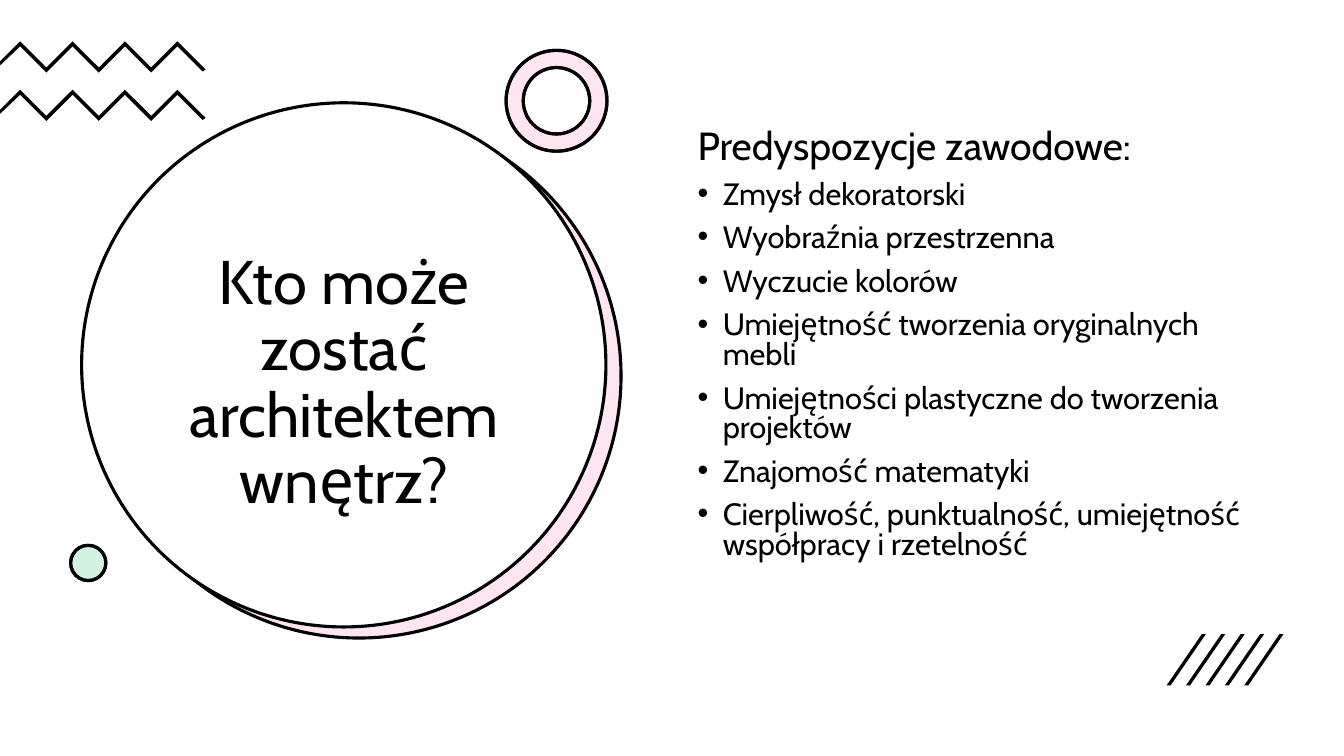
"""Build the slide on who can become an interior architect."""
from lxml import etree
from pptx import Presentation
from pptx.dml.color import RGBColor
from pptx.enum.shapes import MSO_SHAPE
from pptx.enum.text import MSO_ANCHOR, PP_ALIGN
from pptx.oxml.ns import qn
from pptx.util import Inches, Pt

OVAL, DONUT = MSO_SHAPE.OVAL, MSO_SHAPE.DONUT
MIDDLE, TOP = MSO_ANCHOR.MIDDLE, MSO_ANCHOR.TOP
CENTER = PP_ALIGN.CENTER
FONT = "Cabin"
COLORS = {"ink": "000000", "paper": "FFFFFF", "pink": "FF80BD", "green": "21C46B"}
TINT_ALPHA = "20000"

deck = Presentation()
deck.slide_width, deck.slide_height = Inches(13.33), Inches(7.5)
page = deck.slides.add_slide(deck.slide_layouts[6])
page.background.fill.solid()
page.background.fill.fore_color.rgb = RGBColor.from_string(COLORS["paper"])


def add_ink_outline(points):
    """Draw a closed black shape through points given in inches."""
    corners = [(Inches(x), Inches(y)) for x, y in points]
    builder = page.shapes.build_freeform(*corners[0])
    builder.add_line_segments(corners[1:], close=True)
    shape = builder.convert_to_shape()
    shape.shadow.inherit = False
    shape.fill.solid()
    shape.fill.fore_color.rgb = RGBColor.from_string(COLORS["ink"])
    shape.line.fill.background()


def add_text_frame(left, top, width, height, anchor):
    """Add a wrapping text box and return its frame."""
    box = page.shapes.add_textbox(Inches(left), Inches(top), Inches(width), Inches(height))
    box.text_frame.word_wrap = True
    box.text_frame.vertical_anchor = anchor
    return box.text_frame


rounds = [
    (OVAL, 0.97, 1.14, 5.2, "paper", False),
    (OVAL, 0.96, 1.13, 5.2, "pink", True),
    (OVAL, 0.81, 1.02, 5.2, "paper", True),
    (DONUT, 5.02, 0.5, 1, "paper", True),
    (DONUT, 5.02, 0.5, 1, "pink", True),
    (OVAL, 0.7, 5.41, 0.35, "paper", True),
    (OVAL, 0.7, 5.41, 0.35, "green", True),
]
for kind, left, top, size, color, outlined in rounds:
    shape = page.shapes.add_shape(kind, Inches(left), Inches(top), Inches(size), Inches(size))
    shape.shadow.inherit = False
    shape.fill.solid()
    shape.fill.fore_color.rgb = RGBColor.from_string(COLORS[color])
    if color != "paper":
        tint = shape.fill._xPr.find(".//" + qn("a:srgbClr"))
        etree.SubElement(tint, qn("a:alpha")).set("val", TINT_ALPHA)
    if kind == DONUT:
        shape.adjustments[0] = 0.17
    if outlined:
        shape.line.color.rgb = RGBColor.from_string(COLORS["ink"])
        shape.line.width = Pt(2.25)
    else:
        shape.line.fill.background()

for top in (0.41, 0.89):
    teeth = [(0.2 + 0.26 * i, top + 0.26 * (i % 2)) for i in range(7)]
    lower_teeth = [(x, y + 0.05) for x, y in reversed(teeth)]
    tip = [(2.04, top + 0.28), (2.01, top + 0.3)]
    start = [(0, top + 0.24), (0, top + 0.2)]
    add_ink_outline(teeth + tip + lower_teeth + start)

for i in range(5):
    left = 11.57 + 0.1925 * i
    add_ink_outline([(left + 0.04, 6.8), (left, 6.8), (left + 0.35, 6.29), (left + 0.39, 6.29)])

title = add_text_frame(1.21, 2.05, 4.41, 3.52, MIDDLE).paragraphs[0]
title.text = "Kto może zostać architektem wnętrz?"
title.alignment = CENTER
title.line_spacing = 0.9
title.font.size = Pt(44)

body = add_text_frame(6.82, 1.24, 5.71, 4.76, TOP)
heading = body.paragraphs[0]
heading.text = "Predyspozycje zawodowe:"
heading.font.size = Pt(28)

skills = [
    "Zmysł dekoratorski",
    "Wyobraźnia przestrzenna",
    "Wyczucie kolorów",
    "Umiejętność tworzenia oryginalnych mebli",
    "Umiejętności plastyczne do tworzenia projektów",
    "Znajomość matematyki",
    "Cierpliwość, punktualność, umiejętność współpracy i rzetelność",
]
for skill in skills:
    para = body.add_paragraph()
    para.text = skill
    para.font.size = Pt(22)

for para in body.paragraphs:
    para.line_spacing = 0.8
    para.space_before = Pt(10)

for para in body.paragraphs[1:]:
    properties = para._p.get_or_add_pPr()
    properties.set("marL", str(Inches(0.25)))
    properties.set("indent", str(Inches(-0.25)))
    bullet_font = etree.Element(qn("a:buFont"), typeface="Arial")
    bullet = etree.Element(qn("a:buChar"), char="•")
    run_defaults = properties.find(qn("a:defRPr"))
    run_defaults.addprevious(bullet_font)
    run_defaults.addprevious(bullet)

for para in (title, *body.paragraphs):
    para.font.name = FONT
    para.font.color.rgb = RGBColor.from_string(COLORS["ink"])

deck.save("out.pptx")
